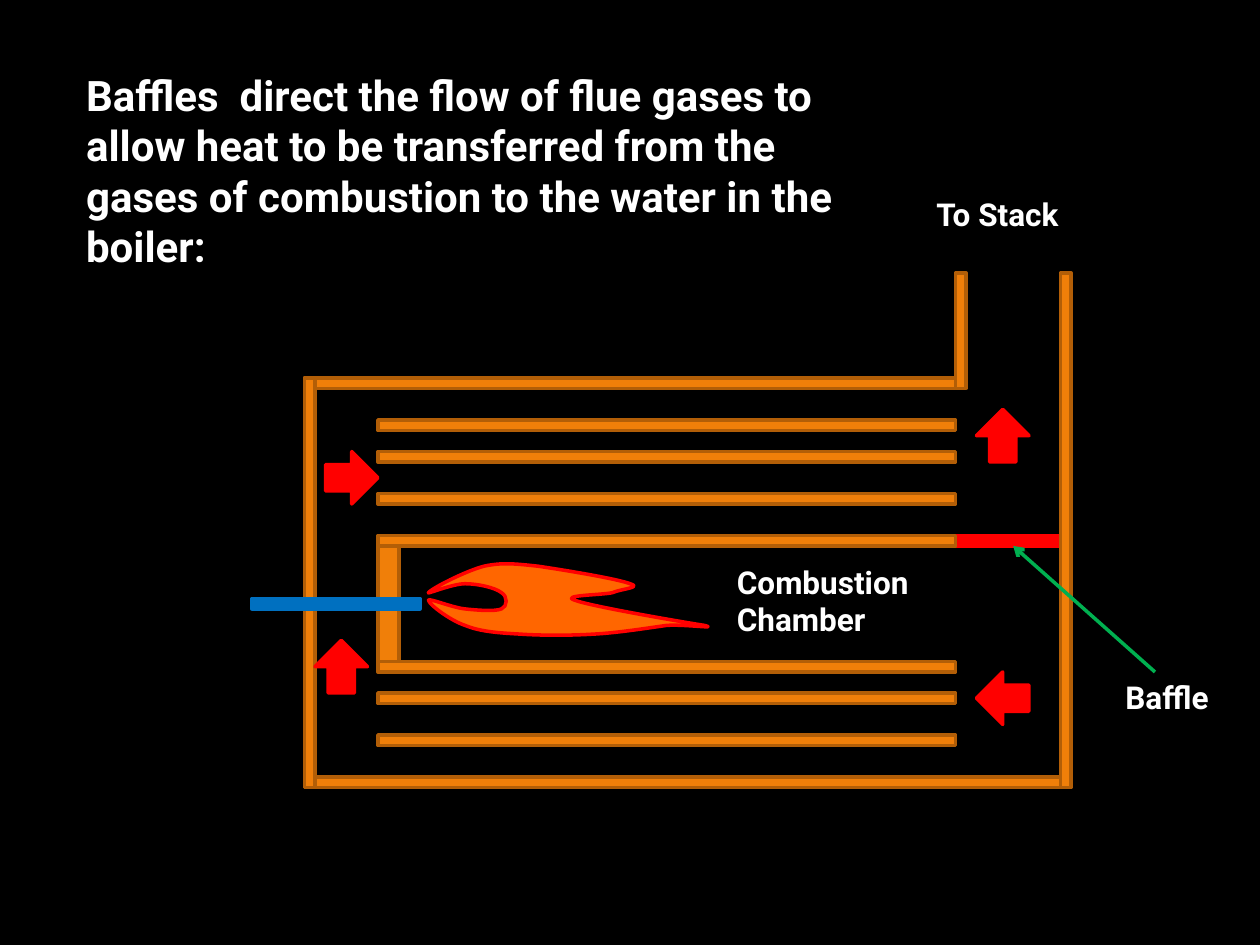
"""Build a slide showing how baffles direct flue gases through a boiler."""
import lxml.etree
import pptx
import pptx.dml.color
import pptx.enum.shapes
import pptx.enum.text
import pptx.oxml.ns
import pptx.util

Pt = pptx.util.Pt
qn = pptx.oxml.ns.qn
SHAPES = pptx.enum.shapes.MSO_SHAPE


def paint(color_format, hex_color):
    color_format.rgb = pptx.dml.color.RGBColor.from_string(hex_color)


class BoilerSlide:
    font = "Roboto"
    lettering = "FFFFFF"
    background = "000000"
    wall = "F07F09"
    wall_edge = "B25E07"
    gas = "FF0000"
    flame_fill = "FF6600"
    burner = "0070C0"
    pointer_line = "00B050"
    line_width = 2
    thickness = 6
    arrow_size = 30

    def __init__(self, slide):
        self.slide = slide
        slide.background.fill.solid()
        paint(slide.background.fill.fore_color, self.background)

    def finish(self, shape, fill, edge):
        shape.shadow.inherit = False
        shape.fill.solid()
        paint(shape.fill.fore_color, fill)
        paint(shape.line.color, edge)
        shape.line.width = Pt(self.line_width)

    def bar(self, left, top, width, height, fill=wall, edge=wall_edge):
        box = map(Pt, (left, top, width, height))
        self.finish(self.slide.shapes.add_shape(SHAPES.RECTANGLE, *box), fill, edge)

    def gas_arrow(self, left, top, rotation):
        arrow = self.slide.shapes.add_shape(
            SHAPES.LEFT_ARROW, Pt(left), Pt(top), Pt(self.arrow_size), Pt(self.arrow_size))
        arrow.rotation = rotation
        self.finish(arrow, self.gas, self.gas)

    def flame(self, left, top, curves):
        points = [(Pt(left + x), Pt(top + y)) for curve in curves for x, y in curve]
        builder = self.slide.shapes.build_freeform(*points[-1])
        builder.add_line_segments(points, close=True)
        outline = builder.convert_to_shape()
        segments = list(outline.element.iter(qn("a:lnTo")))
        for first in range(0, len(segments), 3):
            curve = lxml.etree.Element(qn("a:cubicBezTo"))
            segments[first].addprevious(curve)
            for segment in segments[first:first + 3]:
                curve.append(segment[0])
                segment.getparent().remove(segment)
        outline.rotation = 90
        self.finish(outline, self.flame_fill, self.gas)

    def pointer(self, start, end):
        pointer = self.slide.shapes.add_connector(
            pptx.enum.shapes.MSO_CONNECTOR.STRAIGHT, *map(Pt, start + end))
        paint(pointer.line.color, self.pointer_line)
        pointer.line.width = Pt(self.line_width)
        properties = pointer.element.spPr
        lxml.etree.SubElement(properties.find(qn("a:ln")), qn("a:tailEnd"), type="arrow")
        lxml.etree.SubElement(properties, qn("a:effectLst"))

    def put_text(self, frame, wording, size):
        frame.word_wrap = True
        frame.vertical_anchor = pptx.enum.text.MSO_ANCHOR.TOP
        paragraph = frame.paragraphs[0]
        paragraph.alignment = pptx.enum.text.PP_ALIGN.LEFT
        run = paragraph.add_run()
        run.text = wording
        run.font.name = self.font
        run.font.size = Pt(size)
        run.font.bold = True
        paint(run.font.color, self.lettering)

    def title(self, wording, left, top, width, height):
        heading = self.slide.shapes.title
        heading.left, heading.top = Pt(left), Pt(top)
        heading.width, heading.height = Pt(width), Pt(height)
        heading.text_frame.auto_size = pptx.enum.text.MSO_AUTO_SIZE.NONE
        self.put_text(heading.text_frame, wording, 24)

    def label(self, wording, left, top, width, height):
        caption = self.slide.shapes.add_textbox(*map(Pt, (left, top, width, height)))
        self.put_text(caption.text_frame, wording, 18)
        caption.text_frame.auto_size = pptx.enum.text.MSO_AUTO_SIZE.SHAPE_TO_FIT_TEXT


FLAME_CURVES = [
    [(18.7, 91.4), (18.7, 67), (17.3, 61.2)],
    [(15.1, 56.2), (14.4, 43.9), (12.2, 51.1)],
    [(9.4, 58.3), (4.3, 89.3), (2.2, 103.7)],
    [(0.7, 117.4), (0, 124.6), (2.2, 134.6)],
    [(5, 145.4), (15.1, 164.9), (17.3, 166.3)],
    [(18.7, 168.5), (12.2, 152.6), (12.2, 145.4)],
    [(12.2, 138.2), (14.4, 128.2), (17.3, 124.6)],
    [(19.4, 121), (25.2, 121), (26.6, 124.6)],
    [(28.1, 128.2), (27.4, 138.2), (26.6, 145.4)],
    [(25.9, 152.6), (20.2, 166.3), (21.6, 166.3)],
    [(23.8, 166.3), (33.1, 154.1), (36, 145.4)],
    [(39.6, 136.8), (40.3, 126), (41, 113.8)],
    [(41.8, 101.5), (41.8, 85.7), (41, 72)],
    [(40.3, 58.3), (37.4, 40.3), (36, 30.2)],
    [(35.3, 19.4), (38.2, 0), (36, 8.6)],
    [(34.6, 18), (25.2, 73.4), (21.6, 82.8)],
]


def main():
    deck = pptx.Presentation()
    deck.slide_width, deck.slide_height = Pt(720), Pt(540)
    boiler = BoilerSlide(deck.slides.add_slide(deck.slide_layouts[5]))
    thickness = boiler.thickness

    boiler.title("Baffles  direct the flow of flue gases to allow heat to be transferred "
                 "from the gases of combustion to the water in the boiler:", 42, 36, 456, 124)

    boiler.bar(546, 156, thickness, 66)
    boiler.bar(216, 312, 12, 66)
    boiler.bar(546, 306, 66, thickness, boiler.gas, boiler.gas)
    boiler.bar(174, 216, 372, thickness)
    for tube_top in (240, 258, 282, 306, 378, 396, 420):
        boiler.bar(216, tube_top, 330, thickness)
    boiler.bar(174, 444, 432, thickness)
    boiler.bar(606, 156, thickness, 294)
    boiler.bar(174, 216, thickness, 234)
    boiler.bar(144, 342, 96, thickness, boiler.burner, boiler.burner)
    boiler.flame(306, 258, FLAME_CURVES)

    for left, top, rotation in ((558, 384, 0), (180, 366, 90), (186, 258, 180), (558, 234, 90)):
        boiler.gas_arrow(left, top, rotation)

    boiler.label("To Stack", 528, 108, 108, 29)
    boiler.label("Combustion Chamber", 414, 318, 144, 51)
    boiler.pointer((660, 384), (579, 312))
    boiler.label("Baffle", 636, 384, 72, 29)
    deck.save("out.pptx")


if __name__ == "__main__":
    main()
